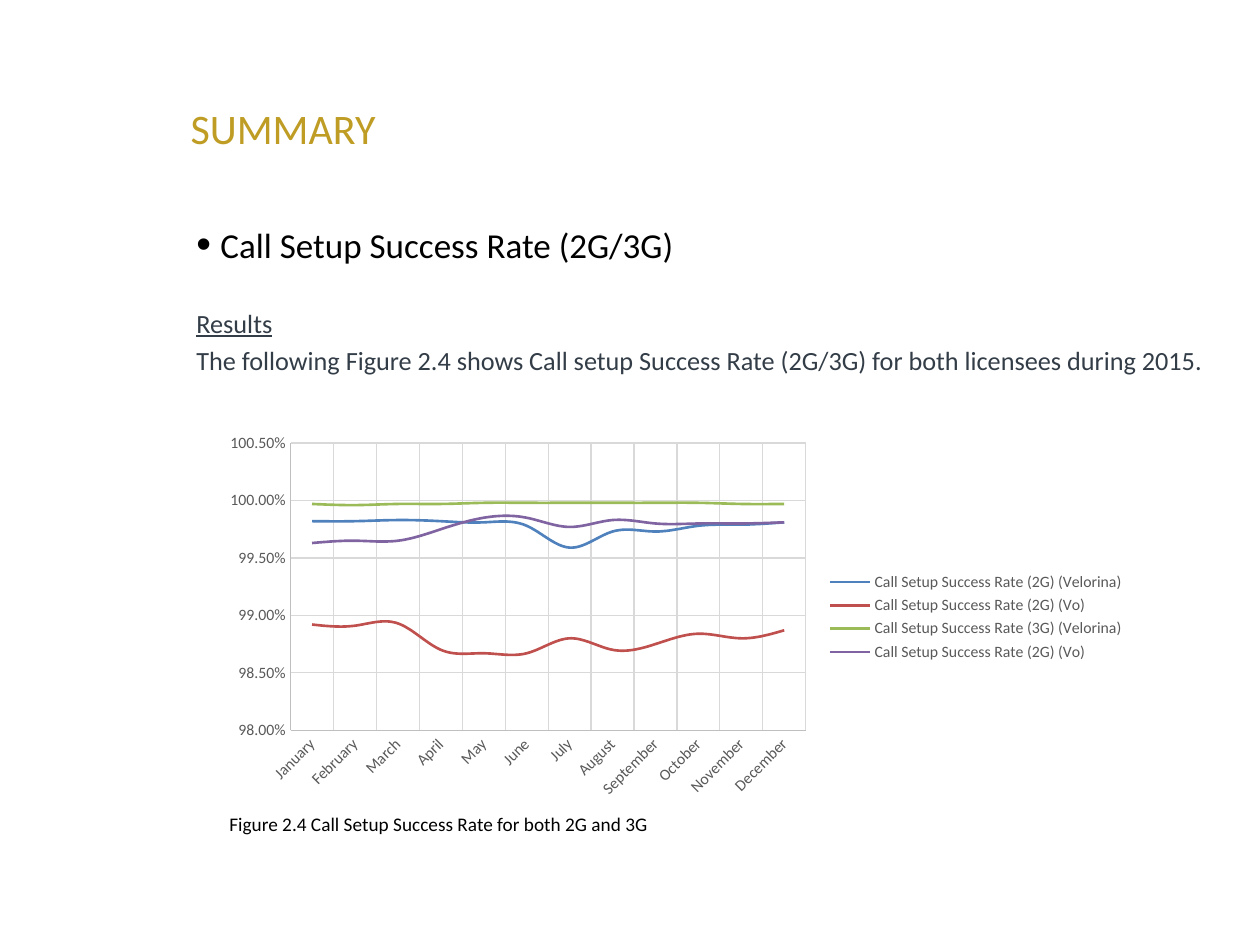
import pptx
import pptx.chart.data
import pptx.dml.color
import pptx.enum.chart
import pptx.enum.text
import pptx.oxml
import pptx.oxml.ns
import pptx.util

MONTHS = ["January", "February", "March", "April", "May", "June", "July",
          "August", "September", "October", "November", "December"]
RATES = [
    ("Call Setup Success Rate (2G) (Velorina)", "4F81BD",
     [99.82, 99.82, 99.83, 99.82, 99.81, 99.78, 99.59, 99.73, 99.73, 99.78, 99.79, 99.81]),
    ("Call Setup Success Rate (2G) (Vo)", "C0504D",
     [98.92, 98.91, 98.93, 98.70, 98.67, 98.67, 98.80, 98.70, 98.75, 98.84, 98.80, 98.87]),
    ("Call Setup Success Rate (3G) (Velorina)", "9BBB59",
     [99.97, 99.96, 99.97, 99.97, 99.98, 99.98, 99.98, 99.98, 99.98, 99.98, 99.97, 99.97]),
    ("Call Setup Success Rate (2G) (Vo)", "8064A2",
     [99.63, 99.65, 99.65, 99.75, 99.85, 99.85, 99.77, 99.83, 99.80, 99.80, 99.80, 99.81]),
]


def px(num):
    """Turn pixels into EMU."""
    return pptx.util.Emu(round(num * 914400 / 126))


def tint(code):
    """Turn a hex string into a colour."""
    return pptx.dml.color.RGBColor.from_string(code)


def apply(item, **vals):
    """Set each named value on an item."""
    for name, val in vals.items():
        setattr(item, name, val)


def node(tag, body="", **vals):
    """Make an XML element from a prefixed tag."""
    mark = tag.split(":")[0]
    attrs = " ".join(f'{name}="{val}"' for name, val in vals.items())
    spaces = pptx.oxml.ns.nsdecls(mark)
    return pptx.oxml.parse_xml(f"<{tag} {spaces} {attrs}>{body}</{tag}>")


class Deck:
    """Hold the style and the current slide."""

    face = "Calibri"
    grey = "595959"

    def __init__(self):
        """Start a deck with one title-only slide."""
        self.file = pptx.Presentation()
        apply(self.file, slide_width=px(1260), slide_height=px(945))
        self.slide = self.file.slides.add_slide(self.file.slide_layouts[5])

    def font(self, font, size, color, **more):
        """Format a font."""
        apply(font, name=self.face, size=pptx.util.Pt(size), **more)
        font.color.rgb = tint(color)

    def line(self, line, color, width=0.75):
        """Format a line."""
        line.color.rgb = tint(color)
        line.width = pptx.util.Pt(width)

    def title(self, text, box, size, color):
        """Place the slide title."""
        shape = self.slide.shapes.title
        apply(shape, **dict(zip(("left", "top", "width", "height"), map(px, box))))
        frame = shape.text_frame
        apply(frame, text=text, word_wrap=False,
              auto_size=pptx.enum.text.MSO_AUTO_SIZE.NONE,
              vertical_anchor=pptx.enum.text.MSO_ANCHOR.MIDDLE)
        par = frame.paragraphs[0]
        par.alignment = pptx.enum.text.PP_ALIGN.LEFT
        self.font(par.font, size, color)

    def text(self, box, rows):
        """Add a text box with one paragraph for each row."""
        frame = self.slide.shapes.add_textbox(*map(px, box)).text_frame
        frame.word_wrap = True
        for spot, (text, size, color, more) in enumerate(rows):
            par = frame.add_paragraph() if spot else frame.paragraphs[0]
            par.text = text
            look = dict(more)
            gap = look.pop("gap", 0)
            if look.pop("dot", False):
                self.dot(par)
            if gap:
                par.space_before = pptx.util.Pt(gap)
            self.font(par.font, size, color, **look)

    def dot(self, par):
        """Give a paragraph a large hanging bullet."""
        props = par._p.get_or_add_pPr()
        props.set("marL", str(px(24)))
        props.set("indent", str(px(-24)))
        props.append(node("a:buSzPct", val="120000"))
        props.append(node("a:buFont", typeface="Arial"))
        props.append(node("a:buChar", char="•"))

    def axis(self, axis):
        """Format a chart axis and its grid."""
        none = pptx.enum.chart.XL_TICK_MARK.NONE
        apply(axis, has_major_gridlines=True, major_tick_mark=none,
              minor_tick_mark=none)
        self.line(axis.format.line, "BFBFBF")
        self.line(axis.major_gridlines.format.line, "D9D9D9")
        self.font(axis.tick_labels.font, 9, self.grey)

    def plot(self, box, cats, rows):
        """Add a smooth line chart of percentages."""
        data = pptx.chart.data.CategoryChartData(number_format="0.00%")
        data.categories = cats
        for name, _, vals in rows:
            data.add_series(name, [round(val / 100, 4) for val in vals])
        kind = pptx.enum.chart.XL_CHART_TYPE.LINE
        chart = self.slide.shapes.add_chart(kind, *map(px, box), data).chart
        apply(chart, has_title=False, has_legend=True)
        self.font(chart.font, 10, "000000")
        apply(chart.legend, include_in_layout=False,
              position=pptx.enum.chart.XL_LEGEND_POSITION.RIGHT)
        self.font(chart.legend.font, 9, self.grey)
        self.axis(chart.category_axis)
        self.axis(chart.value_axis)
        chart.category_axis._element.txPr.bodyPr.set("rot", "-2700000")
        apply(chart.value_axis, minimum_scale=0.98, maximum_scale=1.005,
              major_unit=0.005)
        apply(chart.value_axis.tick_labels, number_format="0.00%",
              number_format_is_linked=False)
        chart.plots[0].vary_by_categories = False
        for curve, (_, color, _) in zip(chart.plots[0].series, rows):
            curve.smooth = True
            self.line(curve.format.line, color, 1.5)
        self.inset(chart, x=0.08, y=0.04, w=0.56, h=0.76)

    def inset(self, chart, **parts):
        """Fix the inner plot area as parts of the chart."""
        area = chart._chartSpace.chart.plotArea
        for old in area.findall(pptx.oxml.ns.qn("c:layout")):
            area.remove(old)
        body = '<c:layoutTarget val="inner"/>'
        body += '<c:xMode val="edge"/><c:yMode val="edge"/>'
        body += "".join(f'<c:{name} val="{val}"/>' for name, val in parts.items())
        area.insert(0, node("c:layout", f"<c:manualLayout>{body}</c:manualLayout>"))


def main():
    """Build the summary slide."""
    deck = Deck()
    deck.title("SUMMARY", (178, 96, 217, 63), 24, "BF9D25")
    deck.text((184, 217, 1039, 180), [
        ("Call Setup Success Rate (2G/3G)", 20, "000000", {"dot": True}),
        ("Results", 15, "333D47", {"gap": 24, "underline": True}),
        ("The following Figure 2.4 shows Call setup Success Rate (2G/3G) "
         "for both licensees during 2015.", 15, "333D47", {"gap": 3}),
    ])
    deck.plot((217, 428, 920, 378), MONTHS, RATES)
    deck.text((217, 806, 630, 36), [
        ("Figure 2.4 Call Setup Success Rate for both 2G and 3G", 11, "000000", {}),
    ])
    deck.file.save("out.pptx")


if __name__ == "__main__":
    main()
